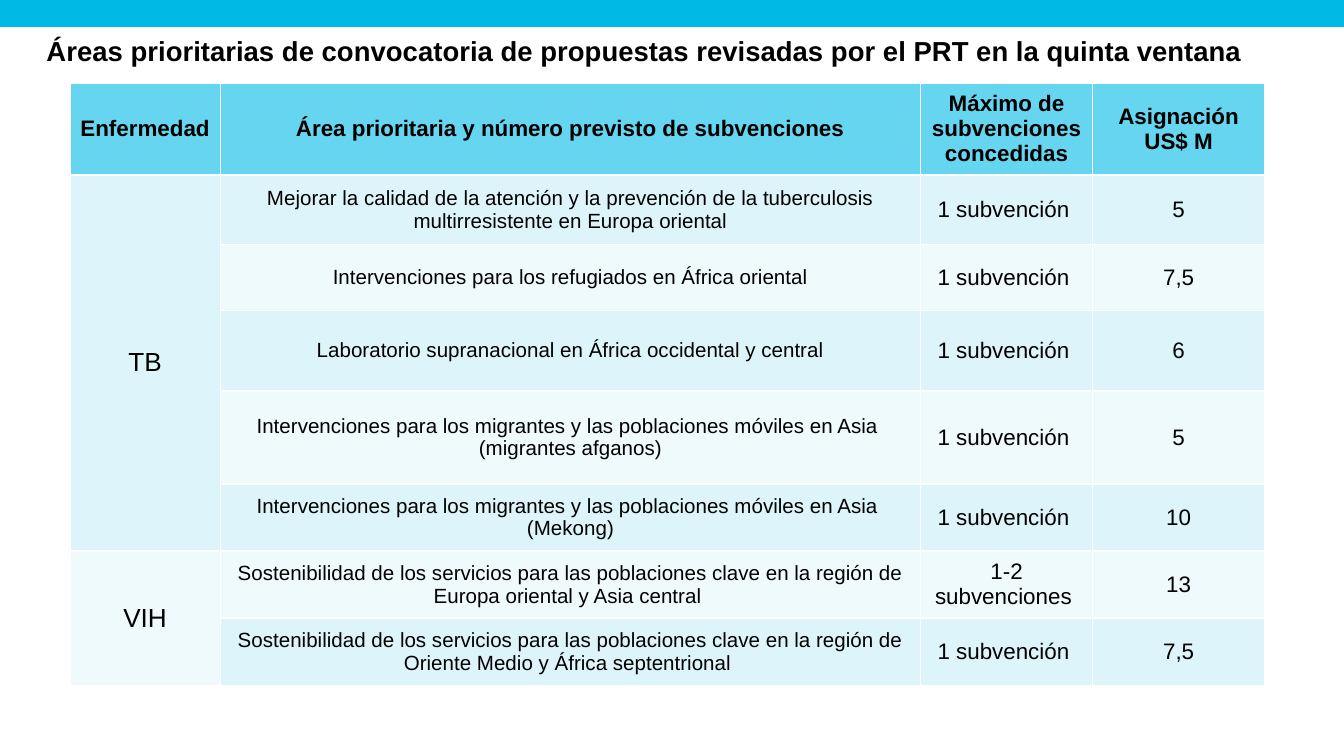
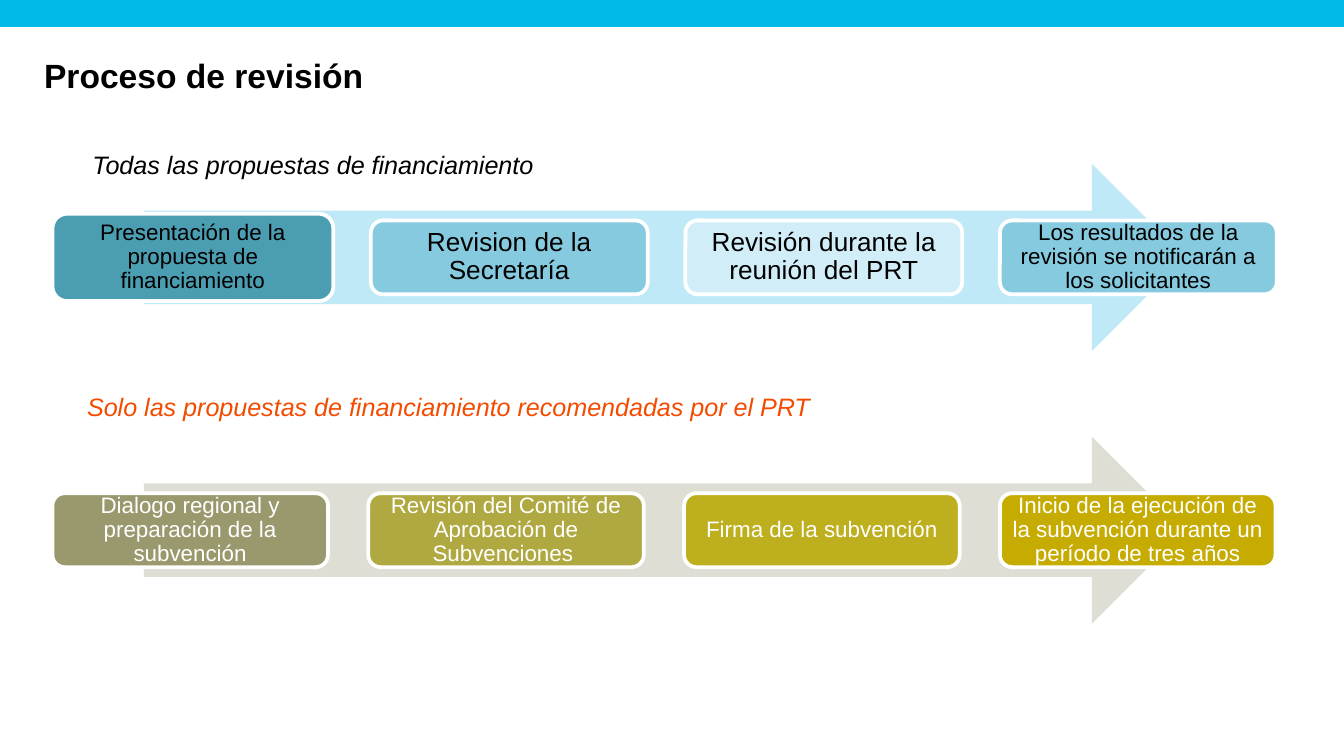
"""Build two slides on the fifth review window: priority areas and review process."""
from dataclasses import dataclass
from typing import NamedTuple

import pptx
import pptx.dml.color
import pptx.enum.shapes
import pptx.enum.text
import pptx.oxml
import pptx.oxml.ns
import pptx.util

Inches = pptx.util.Inches
Shape = pptx.enum.shapes.MSO_SHAPE
Align = pptx.enum.text.PP_ALIGN
Anchor = pptx.enum.text.MSO_ANCHOR


@dataclass(frozen=True)
class Theme:
    font: str = "Arial"
    band: str = "00B9E4"
    black: str = "000000"
    white: str = "FFFFFF"
    accent: str = "F34C00"
    header: str = "66D5EF"
    stripes: tuple = ("DEF4FB", "EFFAFD")
    title_size: float = 18
    long_title_size: float = 14.7
    caption_size: float = 13.5
    large_size: float = 14
    body_size: float = 12
    small_size: float = 11


THEME = Theme()


class TextStyle(NamedTuple):
    size: float
    color: str = THEME.black
    bold: bool = False
    italic: bool = False
    align: Align = Align.CENTER
    spacing: float = 1.0


class Box(NamedTuple):
    left: float
    top: float
    width: float
    height: float

    def lengths(self) -> list:
        return [Inches(value) for value in self]


class Area(NamedTuple):
    disease: str
    name: str
    maximum: str
    allocation: str
    height: float


class Step(NamedTuple):
    text: str
    fill: str
    size: float = THEME.body_size
    width: float = 2.05
    height: float = 0.55


class Process(NamedTuple):
    caption: str
    caption_box: Box
    caption_color: str
    arrow_top: float
    arrow_fill: str
    step_color: str
    gap: float
    steps: tuple


HEADINGS = ("Enfermedad", "Área prioritaria y número previsto de subvenciones",
            "Máximo de subvenciones concedidas", "Asignación\nUS$ M")
COLUMN_WIDTHS = (1.12, 5.21, 1.28, 1.28)
HEADER_HEIGHT = 0.68
ONE_GRANT = "1 subvención "
MIGRANTS = "Intervenciones para los migrantes y las poblaciones móviles en Asia "
SUSTAINABILITY = "Sostenibilidad de los servicios para las poblaciones clave en la región de "
AREAS = (
    Area("TB", "Mejorar la calidad de la atención y la prevención de la tuberculosis "
         "multirresistente en Europa oriental", ONE_GRANT, "5", 0.52),
    Area("TB", "Intervenciones para los refugiados en África oriental", ONE_GRANT, "7,5", 0.49),
    Area("TB", "Laboratorio supranacional en África occidental y central", ONE_GRANT, "6", 0.6),
    Area("TB", MIGRANTS + "\n(migrantes afganos)", ONE_GRANT, "5", 0.69),
    Area("TB", MIGRANTS + "\n(Mekong)", ONE_GRANT, "10", 0.5),
    Area("VIH", SUSTAINABILITY + "Europa oriental y Asia central ", "1-2 subvenciones ", "13", 0.5),
    Area("VIH", SUSTAINABILITY + "Oriente Medio y África septentrional ", ONE_GRANT, "7,5", 0.5),
)

ARROW_LEFT, ARROW_WIDTH, ARROW_HEIGHT = 1.07, 7.75, 1.39
STEPS_LEFT = 0.39
PROCESSES = (
    Process("Todas las propuestas de financiamiento", Box(0.59, 1.06, 3.53, 0.33),
            THEME.black, 1.22, "BFE9F6", THEME.black, 0.28, (
                Step("Presentación de la propuesta de financiamiento", "4B9EB1",
                     width=2.09, height=0.65),
                Step("Revision de la Secretaría", "85CADE", THEME.large_size, 2.06),
                Step("Revisión durante la reunión del PRT", "D1EEF8", THEME.large_size, 2.06),
                Step("Los resultados de la revisión se notificarán a los solicitantes",
                     "85CADE", width=2.06))),
    Process("Solo las propuestas de financiamiento recomendadas por el PRT",
            Box(0.55, 2.86, 5.66, 0.33), THEME.accent, 3.25, "DEDED5", THEME.white, 0.3, (
                Step("Dialogo regional y preparación de la subvención", "9A996E"),
                Step("Revisión del Comité de Aprobación de Subvenciones ", "B0A942"),
                Step("Firma de la subvención", "BEAF1E"),
                Step("Inicio de la ejecución de la subvención durante un período de tres años",
                     "C6AC00"))),
)


def rgb(color: str) -> pptx.dml.color.RGBColor:
    """Return a colour object for a hex value."""
    return pptx.dml.color.RGBColor.from_string(color)


def write_text(frame, text: str, style: TextStyle) -> None:
    """Fill a text frame with evenly styled paragraphs."""
    frame.text = text
    for paragraph in frame.paragraphs:
        paragraph.alignment = style.align
        paragraph.line_spacing = style.spacing
        font = paragraph.font
        font.name = THEME.font
        font.size = pptx.util.Pt(style.size)
        font.bold, font.italic = style.bold, style.italic
        font.color.rgb = rgb(style.color)


def set_margins(target, horizontal: float, top: float, bottom: float) -> None:
    """Set the inner margins of a text frame or a cell."""
    target.margin_left = target.margin_right = Inches(horizontal)
    target.margin_top, target.margin_bottom = Inches(top), Inches(bottom)


def add_text(slide, box: Box, text: str, style: TextStyle, wrap: bool = False):
    """Add a text box and return its frame."""
    frame = slide.shapes.add_textbox(*box.lengths()).text_frame
    frame.word_wrap = wrap
    write_text(frame, text, style)
    return frame


def add_shape(slide, kind: Shape, box: Box, fill: str, line: str = ""):
    """Add a flat preset shape with an optional outline."""
    shape = slide.shapes.add_shape(kind, *box.lengths())
    shape.shadow.inherit = False
    shape.fill.solid()
    shape.fill.fore_color.rgb = rgb(fill)
    if line:
        shape.line.color.rgb = rgb(line)
        shape.line.width = pptx.util.Pt(2)
    else:
        shape.line.fill.background()
    return shape


def add_slide(presentation):
    """Add a blank slide with the top band."""
    slide = presentation.slides.add_slide(presentation.slide_layouts[6])
    add_shape(slide, Shape.RECTANGLE, Box(0, 0, 10, 0.2), THEME.band)
    return slide


def set_borders(cell) -> None:
    """Draw white borders one point wide."""
    properties = cell._tc.get_or_add_tcPr()
    for index, tag in enumerate(("lnL", "lnR", "lnT", "lnB")):
        properties.insert(index, pptx.oxml.parse_xml(
            f'<a:{tag} {pptx.oxml.ns.nsdecls("a")} w="{pptx.util.Pt(1)}"><a:solidFill>'
            f'<a:srgbClr val="{THEME.white}"/></a:solidFill></a:{tag}>'))


def fill_cell(cell, text: str, style: TextStyle, fill: str, horizontal: float = 0.07) -> None:
    """Write and paint one table cell."""
    write_text(cell.text_frame, text, style)
    cell.vertical_anchor = Anchor.MIDDLE
    set_margins(cell, horizontal, 0.04, 0.04)
    cell.fill.solid()
    cell.fill.fore_color.rgb = rgb(fill)
    set_borders(cell)


def add_area_table(slide) -> None:
    """Add the table of priority areas, merged by disease."""
    heights = [HEADER_HEIGHT] + [area.height for area in AREAS]
    box = Box(0.52, 0.62, sum(COLUMN_WIDTHS), sum(heights))
    table = slide.shapes.add_table(len(heights), len(COLUMN_WIDTHS), *box.lengths()).table
    for column, width in zip(table.columns, COLUMN_WIDTHS):
        column.width = Inches(width)
    for row, height in zip(table.rows, heights):
        row.height = Inches(height)
    for index, heading in enumerate(HEADINGS):
        fill_cell(table.cell(0, index), heading, TextStyle(THEME.body_size, bold=True),
                  THEME.header, horizontal=0.07 if index else 0)

    sizes = (THEME.large_size, THEME.small_size, THEME.body_size, THEME.body_size)
    diseases = [area.disease for area in AREAS]
    for number, area in enumerate(AREAS):
        first = diseases.index(area.disease)
        texts = (area.disease if number == first else "", area.name,
                 area.maximum, area.allocation)
        for index, (text, size) in enumerate(zip(texts, sizes)):
            stripe = THEME.stripes[(number if index else first) % 2]
            fill_cell(table.cell(number + 1, index), text, TextStyle(size), stripe)
    for disease in dict.fromkeys(diseases):
        first = diseases.index(disease) + 1
        last = first + diseases.count(disease) - 1
        table.cell(first, 0).merge(table.cell(last, 0))


def add_process(slide, process: Process) -> None:
    """Add an arrow with its caption and a row of steps centred on it."""
    arrow = Box(ARROW_LEFT, process.arrow_top, ARROW_WIDTH, ARROW_HEIGHT)
    add_shape(slide, Shape.RIGHT_ARROW, arrow, process.arrow_fill)
    left = STEPS_LEFT
    for step in process.steps:
        top = arrow.top + (arrow.height - step.height) / 2
        shape = add_shape(slide, Shape.ROUNDED_RECTANGLE,
                          Box(left, top, step.width, step.height), step.fill, THEME.white)
        frame = shape.text_frame
        frame.word_wrap = True
        frame.vertical_anchor = Anchor.MIDDLE
        set_margins(frame, 0.05, 0.05, 0.05)
        write_text(frame, step.text, TextStyle(step.size, process.step_color, spacing=0.9))
        left += step.width + process.gap
    add_text(slide, process.caption_box, process.caption,
             TextStyle(THEME.caption_size, process.caption_color, italic=True, align=Align.LEFT))


def build_areas_slide(presentation) -> None:
    """Build the slide of priority areas."""
    slide = add_slide(presentation)
    add_area_table(slide)
    frame = add_text(slide, Box(0.18, 0.25, 9.23, 0.37),
                     "Áreas prioritarias de convocatoria de propuestas revisadas por el PRT "
                     "en la quinta ventana",
                     TextStyle(THEME.long_title_size, bold=True), wrap=True)
    set_margins(frame, 0, 0, 0.05)


def build_process_slide(presentation) -> None:
    """Build the slide of the review process."""
    slide = add_slide(presentation)
    add_text(slide, Box(0.23, 0.36, 2.6, 0.4), "Proceso de revisión",
             TextStyle(THEME.title_size, bold=True, align=Align.LEFT))
    for process in PROCESSES:
        add_process(slide, process)


def main() -> None:
    """Create and save the presentation."""
    presentation = pptx.Presentation()
    presentation.slide_width = Inches(10)
    presentation.slide_height = Inches(10 * 9 / 16)
    build_areas_slide(presentation)
    build_process_slide(presentation)
    presentation.save("out.pptx")


if __name__ == "__main__":
    main()
